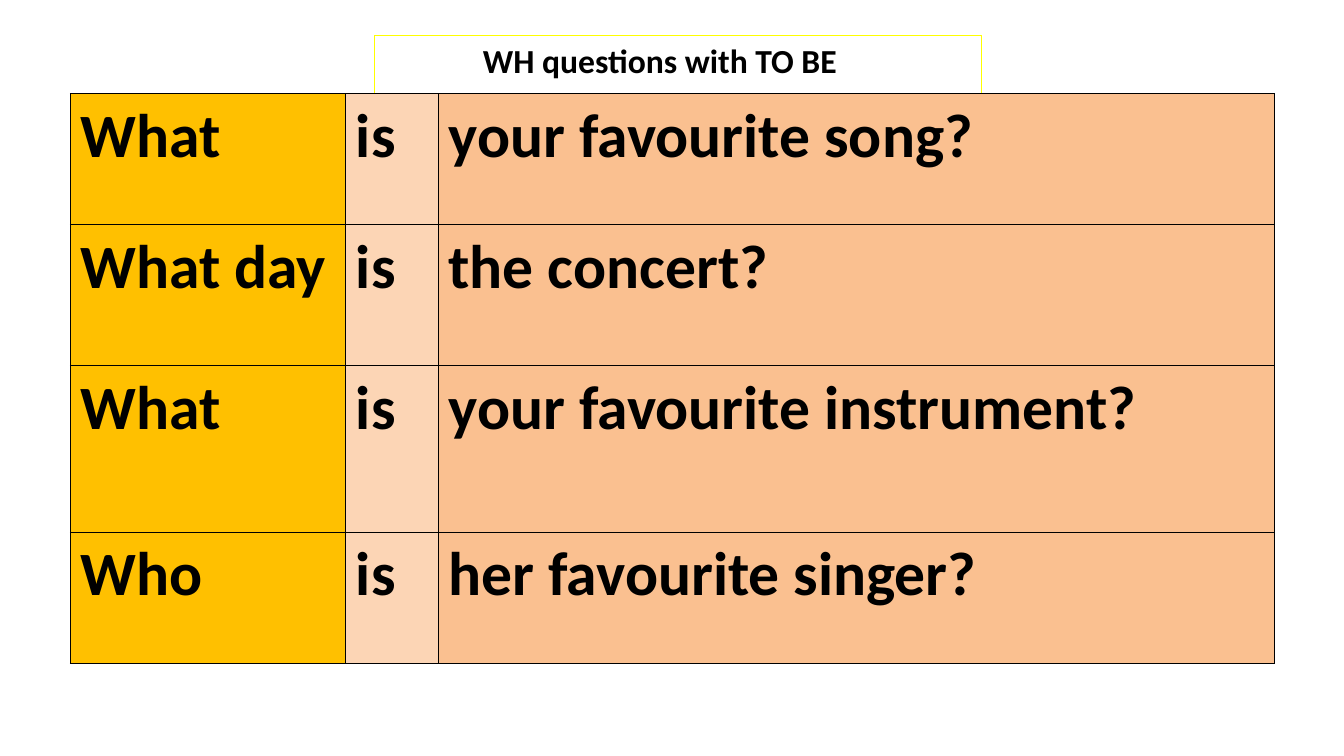
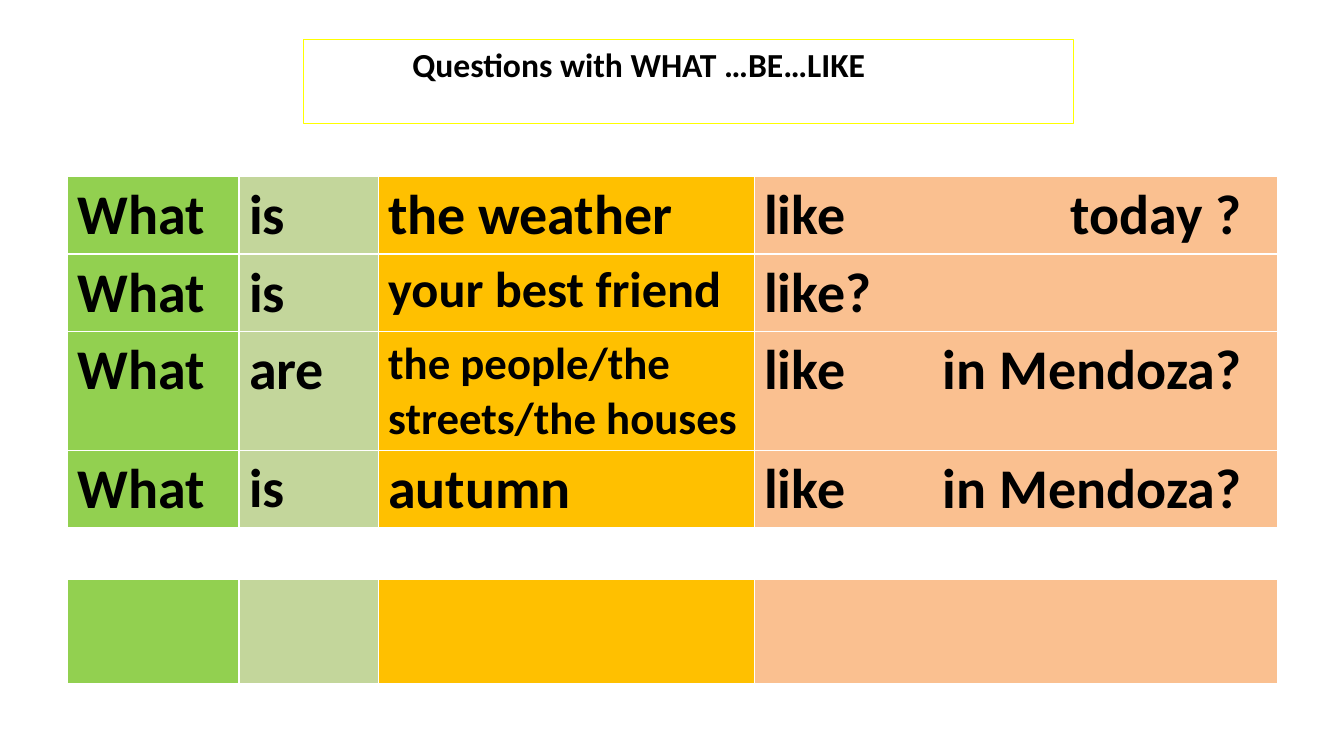
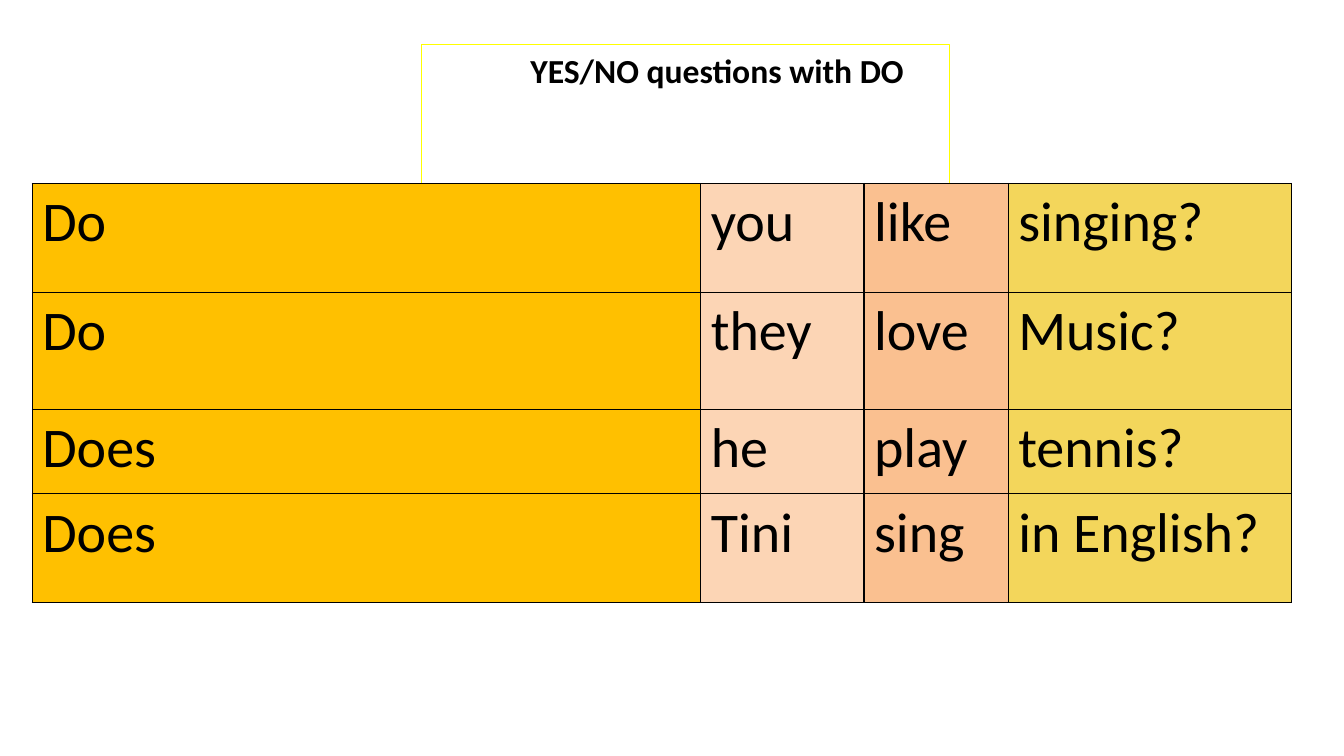
from itertools import product
from lxml.etree import SubElement as Sub
from pptx import Presentation as Deck
from pptx.dml.color import RGBColor as Rgb
from pptx.enum.text import MSO_ANCHOR as Anchor, MSO_AUTO_SIZE as Auto, PP_ALIGN as Align
from pptx.oxml.ns import qn
from pptx.util import Inches, Pt

FONT = "Calibri"
BLACK, WHITE, YELLOW = "000000", "FFFFFF", "FFFF00"
GOLD, PEACH, ORANGE, SAND = "FFC000", "FCD5B5", "FAC090", "F3D65B"
GREEN, SAGE = "92D050", "C3D69B"
INDENT, TAB = 1.08, 4.73


def paint(fill, color):
    """Fill solid with a hex colour."""
    fill.solid()
    fill.fore_color.rgb = Rgb.from_string(color)


def write(frame, text, size=24, bold=True, color=BLACK):
    """Write one left-aligned paragraph; a tab in it runs to a right stop."""
    para = frame.paragraphs[0]
    para.alignment = Align.LEFT
    if "\t" in text:
        stops = Sub(para._p.get_or_add_pPr(), qn("a:tabLst"))
        Sub(stops, qn("a:tab"), pos=str(Inches(TAB)), algn="r")
    run = para.add_run()
    run.text = text
    font = run.font
    font.name, font.size, font.bold = FONT, Pt(size), bold
    font.color.rgb = Rgb.from_string(color)


def head(slide, text, left, top, width):
    """Place the framed title."""
    box = slide.shapes.title
    box.left, box.top = Inches(left), Inches(top)
    box.width, box.height = Inches(width), Inches(0.5)
    paint(box.line.fill, YELLOW)
    box.line.width = Pt(0.75)
    frame = box.text_frame
    frame.word_wrap = True
    frame.auto_size = Auto.SHAPE_TO_FIT_TEXT
    frame.vertical_anchor = Anchor.TOP
    frame.margin_left = Inches(INDENT)
    write(frame, text)


def edge(cell, color):
    """Draw a one-point border on all sides of a cell."""
    props = cell._tc.get_or_add_tcPr()
    for side in "LRTB":
        line = Sub(props, qn(f"a:ln{side}"), w=str(Pt(1)))
        Sub(Sub(line, qn("a:solidFill")), qn("a:srgbClr"), val=color)


def grid(slide, left, top, cols, rows, fills, words=(), line=BLACK, size=40, bold=True):
    """Add a table with one fill per column; a word may carry its own size."""
    spot = [Inches(n) for n in (left, top, sum(cols), sum(rows))]
    table = slide.shapes.add_table(len(rows), len(cols), *spot).table
    table.first_row = table.horz_banding = False
    for col, width in zip(table.columns, cols):
        col.width = Inches(width)
    for row, height in zip(table.rows, rows):
        row.height = Inches(height)
    for r, c in product(range(len(rows)), range(len(cols))):
        cell = table.cell(r, c)
        edge(cell, line)
        paint(cell.fill, fills[c])
        if words:
            word = words[r][c]
            text, points = (word, size) if isinstance(word, str) else word
            write(cell.text_frame, text, size=points, bold=bold)


def be(slide):
    """Build the questions with TO BE."""
    words = [
        ("What", "is", "your favourite song?"),
        ("What day", "is", "the concert?"),
        ("What", "is", "your favourite instrument?"),
        ("Who", "is", "her favourite singer?"),
    ]
    grid(slide, 0.7, 0.93, [2.73, 0.92, 8.29], [1.3, 1.4, 1.65, 1.3],
         [GOLD, PEACH, ORANGE], words, size=44)
    head(slide, "WH questions with TO BE", 3.71, 0.35, 6.03)


def like(slide):
    """Build the questions with WHAT, BE and LIKE, and a blank row to fill in."""
    words = [
        ("What", "is", "the weather", "like\ttoday ?"),
        ("What", "is", ("your best friend", 36), "like?"),
        ("What", "are", ("the people/the streets/the houses", 32), "like\tin Mendoza?"),
        ("What", ("is", 39), "autumn", "like\tin Mendoza?"),
    ]
    cols, fills = [1.7, 1.38, 3.73, 5.19], [GREEN, SAGE, GOLD, ORANGE]
    grid(slide, 0.67, 1.75, cols, [0.77, 0.77, 1.18, 0.77], fills, words, line=WHITE)
    grid(slide, 0.67, 5.75, cols, [1.03], fills, line=WHITE)
    head(slide, "Questions with WHAT …BE…LIKE", 3.01, 0.39, 7.64)


def do(slide):
    """Build the questions with DO."""
    words = [
        ("Do", "you", "like", "singing?"),
        ("Do", "they", "love", "Music?"),
        ("Does", "he", "play", "tennis?"),
        ("Does", "Tini", "sing", "in English?"),
    ]
    grid(slide, 0.32, 1.82, [6.63, 1.62, 1.43, 2.81], [1.08, 1.16, 0.84, 1.08],
         [GOLD, PEACH, ORANGE, SAND], words, bold=False)
    head(slide, "YES/NO questions with DO", 4.18, 0.44, 5.24)


def main():
    """Build and save the deck."""
    deck = Deck()
    deck.slide_width, deck.slide_height = Inches(13.33), Inches(7.5)
    plain = deck.slide_layouts.get_by_name("Title Only")
    for build in (be, like, do):
        build(deck.slides.add_slide(plain))
    deck.save("out.pptx")


if __name__ == "__main__":
    main()
